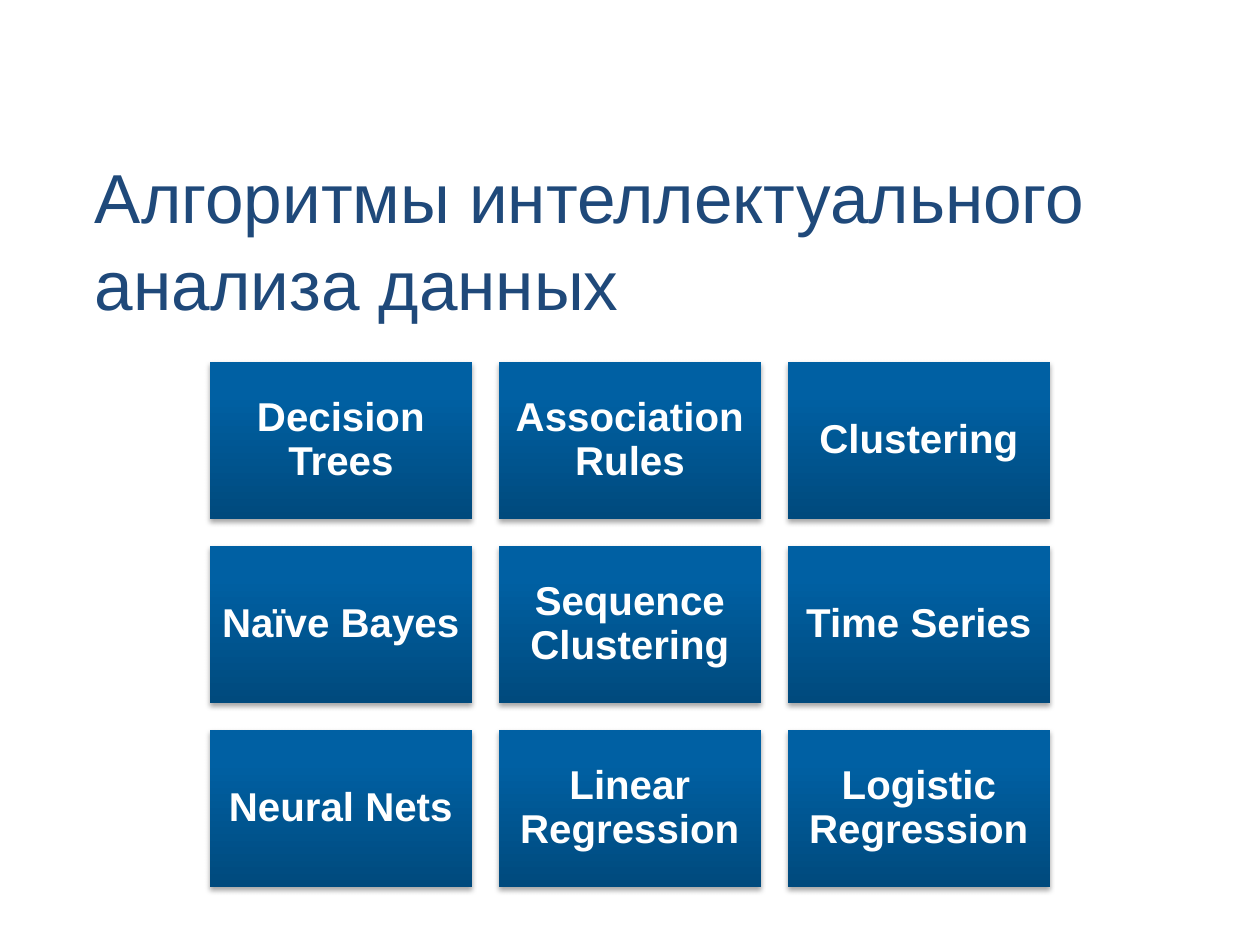
from dataclasses import dataclass

from lxml import etree
from pptx import Presentation
from pptx.dml.color import RGBColor
from pptx.enum.shapes import MSO_SHAPE
from pptx.enum.text import MSO_ANCHOR, PP_ALIGN
from pptx.oxml.ns import qn
from pptx.util import Pt

RECTANGLE = MSO_SHAPE.RECTANGLE
TOP, MIDDLE = MSO_ANCHOR.TOP, MSO_ANCHOR.MIDDLE
LEFT, CENTER = PP_ALIGN.LEFT, PP_ALIGN.CENTER
EMU_PER_PX = 914400 / 126


def px(length):
    return round(length * EMU_PER_PX)


@dataclass(frozen=True)
class Theme:
    font: str = "Arial"
    heading: str = "1F497A"
    tile_text: str = "FFFFFF"
    shadow: str = "000000"
    tile_stops: tuple = ((0, "004A7D"), (80, "0060A3"), (100, "0061A4"))
    heading_size: float = 39.6
    tile_size: float = 23


class SlideBuilder:
    def __init__(self, slide, theme):
        self.slide = slide
        self.theme = theme

    def set_text(self, frame, text, font, paragraph_format, frame_format):
        paragraph = frame.paragraphs[0]
        paragraph.text = text
        font = {"name": self.theme.font, **font}
        color = font.pop("color")
        formats = (
            (frame, {"word_wrap": True, **frame_format}),
            (paragraph, paragraph_format),
            (paragraph.runs[0].font, font),
        )
        for target, values in formats:
            for attribute, value in values.items():
                setattr(target, attribute, value)
        paragraph.runs[0].font.color.rgb = RGBColor.from_string(color)

    def heading(self, text, left, top, width, height):
        box = self.slide.shapes.add_textbox(px(left), px(top), px(width), px(height))
        self.set_text(
            box.text_frame,
            text,
            {"size": Pt(self.theme.heading_size), "color": self.theme.heading},
            {"alignment": LEFT, "line_spacing": 1.04},
            {"vertical_anchor": TOP, "margin_left": 0, "margin_right": 0,
             "margin_top": px(4), "margin_bottom": 0},
        )

    def tile(self, text, left, top, width, height):
        tile = self.slide.shapes.add_shape(
            RECTANGLE, px(left), px(top), px(width), px(height)
        )
        tile.line.fill.background()
        self.shade(tile)
        self.cast_shadow(tile)
        margins = ("margin_left", "margin_right", "margin_top", "margin_bottom")
        self.set_text(
            tile.text_frame,
            text,
            {"size": Pt(self.theme.tile_size), "bold": True,
             "color": self.theme.tile_text},
            {"alignment": CENTER, "line_spacing": 0.9},
            {"vertical_anchor": MIDDLE, **dict.fromkeys(margins, px(12))},
        )

    def shade(self, tile):
        tile.fill.gradient()
        tile.fill.gradient_angle = 90
        stops = tile.element.spPr.find(qn("a:gradFill")).find(qn("a:gsLst"))
        for stop in list(stops):
            stops.remove(stop)
        for position, color in self.theme.tile_stops:
            stop = etree.SubElement(stops, qn("a:gs"), pos=str(position * 1000))
            etree.SubElement(stop, qn("a:srgbClr"), val=color)

    def cast_shadow(self, tile):
        tile.shadow.inherit = False
        effects = tile.element.spPr.find(qn("a:effectLst"))
        shadow = etree.SubElement(
            effects, qn("a:outerShdw"), blurRad=str(Pt(3.1)), dist=str(Pt(1.8)),
            dir="5400000", rotWithShape="0",
        )
        color = etree.SubElement(shadow, qn("a:srgbClr"), val=self.theme.shadow)
        etree.SubElement(color, qn("a:alpha"), val="35000")


ALGORITHMS = (
    ("Decision Trees", "Association Rules", "Clustering"),
    ("Naïve Bayes", "Sequence Clustering", "Time Series"),
    ("Neural Nets", "Linear Regression", "Logistic Regression"),
)
GRID_LEFT, GRID_TOP = 210, 362
TILE_WIDTH, TILE_HEIGHT, GAP = 262, 157, 27


def main():
    deck = Presentation()
    deck.slide_width, deck.slide_height = px(1260), px(945)
    builder = SlideBuilder(deck.slides.add_slide(deck.slide_layouts[6]), Theme())
    builder.heading("Алгоритмы интеллектуального анализа данных", 95, 147, 1071, 95)
    for row, names in enumerate(ALGORITHMS):
        for column, name in enumerate(names):
            builder.tile(
                name,
                GRID_LEFT + column * (TILE_WIDTH + GAP),
                GRID_TOP + row * (TILE_HEIGHT + GAP),
                TILE_WIDTH,
                TILE_HEIGHT,
            )
    deck.save("out.pptx")


if __name__ == "__main__":
    main()
